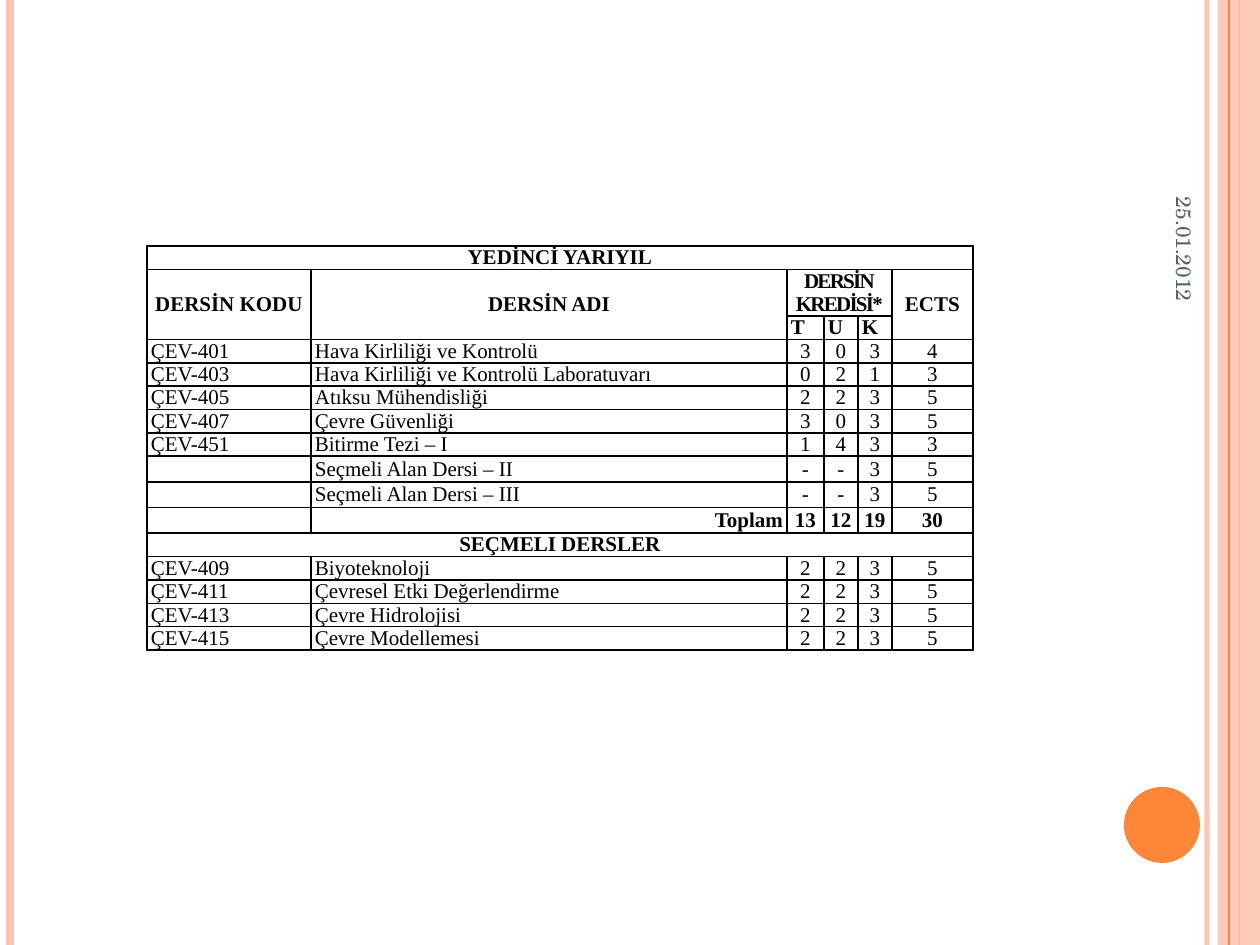
from dataclasses import dataclass

from lxml import etree
from pptx import Presentation
from pptx import util as u
from pptx.dml.color import RGBColor
from pptx.enum import shapes, text
from pptx.oxml import ns

PX = 914400 / 126
WIDTH, HEIGHT = 1260, 945
ORANGE = RGBColor(0xFE, 0x86, 0x37)
PEACH = RGBColor(0xFE, 0xC3, 0xAE)
SLATE = RGBColor(0x57, 0x5F, 0x6D)
BLACK = RGBColor(0, 0, 0)
TABLE_FONT, DATE_FONT = "Times New Roman", "TeX Gyre Schola"
LEFT, CENTER, RIGHT = text.PP_ALIGN.LEFT, text.PP_ALIGN.CENTER, text.PP_ALIGN.RIGHT
COLUMNS = (164, 476, 37, 34, 34, 81)
ROW_HEIGHT = 21


@dataclass(frozen=True)
class Stripe:
    x: int
    color: RGBColor
    points: float
    opacity: int = 100


@dataclass(frozen=True)
class Entry:
    row: int
    col: int
    lines: tuple[str, ...]
    align: text.PP_ALIGN = CENTER
    bold: bool = True
    rows: int = 1
    cols: int = 1
    spacing: int = 0


OUTER_STRIPES = (
    Stripe(1207, PEACH, 3, 93),
    Stripe(10, PEACH, 4.5),
    Stripe(1239, ORANGE, 1.5),
)
INNER_STRIPE = Stripe(1229, ORANGE, 0.75)

HEADINGS = (
    Entry(0, 0, ("YEDİNCİ YARIYIL",), cols=6),
    Entry(1, 0, ("DERSİN KODU",), rows=2),
    Entry(1, 1, ("DERSİN ADI",), rows=2),
    Entry(1, 2, ("DERSİN", "KREDİSİ*"), cols=3, spacing=-100),
    Entry(1, 5, ("ECTS",), rows=2),
    *(Entry(2, col, (name,), LEFT) for col, name in enumerate("TUK", 2)),
    Entry(11, 0, ("SEÇMELI DERSLER",), cols=6),
)
REQUIRED = (
    ("ÇEV-401", "Hava Kirliliği ve Kontrolü", "3", "0", "3", "4"),
    ("ÇEV-403", "Hava Kirliliği ve Kontrolü Laboratuvarı", "0", "2", "1", "3"),
    ("ÇEV-405", "Atıksu Mühendisliği", "2", "2", "3", "5"),
    ("ÇEV-407", "Çevre Güvenliği", "3", "0", "3", "5"),
    ("ÇEV-451", "Bitirme Tezi – I", "1", "4", "3", "3"),
    ("", "Seçmeli Alan Dersi – II", "-", "-", "3", "5"),
    ("", "Seçmeli Alan Dersi – III", "-", "-", "3", "5"),
)
TOTAL = ("", "Toplam", "13", "12", "19", "30")
ELECTIVE = (
    ("ÇEV-409", "Biyoteknoloji", "2", "2", "3", "5"),
    ("ÇEV-411", "Çevresel Etki Değerlendirme", "2", "2", "3", "5"),
    ("ÇEV-413", "Çevre Hidrolojisi", "2", "2", "3", "5"),
    ("ÇEV-415", "Çevre Modellemesi", "2", "2", "3", "5"),
)


def px(length: int) -> u.Emu:
    return u.Emu(round(length * PX))


def set_opacity(properties, percent: int) -> None:
    color = next(properties.iter(ns.qn("a:srgbClr")))
    etree.SubElement(color, ns.qn("a:alpha"), val=str(percent * 1000))


def draw_stripe(slide, stripe: Stripe) -> None:
    line = slide.shapes.add_connector(
        shapes.MSO_CONNECTOR.STRAIGHT, px(stripe.x), 0, px(stripe.x), px(HEIGHT))
    line.line.color.rgb = stripe.color
    line.line.width = u.Pt(stripe.points)
    properties = line._element.spPr
    if stripe.opacity < 100:
        set_opacity(properties, stripe.opacity)
    etree.SubElement(properties, ns.qn("a:effectLst"))


def draw_solid(slide, kind, box: tuple[int, ...], color: RGBColor, opacity: int = 100) -> None:
    solid = slide.shapes.add_shape(kind, *map(px, box))
    solid.shadow.inherit = False
    solid.fill.solid()
    solid.fill.fore_color.rgb = color
    solid.line.fill.background()
    if opacity < 100:
        set_opacity(solid._element.spPr, opacity)


def add_run(paragraph, words: str, font: str, color: RGBColor, bold: bool = False):
    run = paragraph.add_run()
    run.text = words
    run.font.name = font
    run.font.size = u.Pt(12)
    run.font.bold = bold
    run.font.color.rgb = color
    return run


def prepare_cell(cell) -> None:
    cell.vertical_anchor = text.MSO_ANCHOR.MIDDLE
    cell.margin_left = cell.margin_right = px(4)
    cell.margin_top = cell.margin_bottom = 0
    properties = cell._tc.get_or_add_tcPr()
    for side in "LRTB":
        border = etree.SubElement(properties, ns.qn(f"a:ln{side}"), w=str(u.Pt(1)))
        fill = etree.SubElement(border, ns.qn("a:solidFill"))
        etree.SubElement(fill, ns.qn("a:srgbClr"), val=str(BLACK))
    cell.fill.background()
    # Empty cells keep the row low through their end mark
    etree.SubElement(cell.text_frame.paragraphs[0]._p, ns.qn("a:endParaRPr"), sz="1200")


def write_entry(table, entry: Entry) -> None:
    cell = table.cell(entry.row, entry.col)
    if entry.rows * entry.cols > 1:
        cell.merge(table.cell(entry.row + entry.rows - 1, entry.col + entry.cols - 1))
    frame = cell.text_frame
    for index, words in enumerate(entry.lines):
        paragraph = frame.add_paragraph() if index else frame.paragraphs[0]
        paragraph.alignment = entry.align
        run = add_run(paragraph, words, TABLE_FONT, BLACK, entry.bold)
        if entry.spacing:
            run.font._element.set("spc", str(entry.spacing))


def course_entries(first_row: int, courses, bold: bool = False, name_align=LEFT) -> list[Entry]:
    aligns = (LEFT, name_align) + (CENTER,) * 4
    return [
        Entry(row, col, (words,), aligns[col], bold)
        for row, course in enumerate(courses, first_row)
        for col, words in enumerate(course) if words
    ]


def draw_courses(slide) -> None:
    frame = slide.shapes.add_table(
        16, len(COLUMNS), px(147), px(246), px(sum(COLUMNS)), px(428))
    table = frame.table
    table.first_row = table.horz_banding = False
    for column, width in zip(table.columns, COLUMNS):
        column.width = px(width)
    for index, row in enumerate(table.rows):
        row.height = px(ROW_HEIGHT * (2 if index == 1 else 1))
        for cell in row.cells:
            prepare_cell(cell)
    entries = (
        *HEADINGS,
        *course_entries(3, REQUIRED),
        *course_entries(10, [TOTAL], True, RIGHT),
        *course_entries(12, ELECTIVE),
    )
    for entry in entries:
        write_entry(table, entry)


def draw_date(slide) -> None:
    date = slide.shapes.add_textbox(*map(px, (1046, 149, 277, 53)))
    date.rotation = 90
    frame = date.text_frame
    frame.word_wrap = True
    frame.vertical_anchor = text.MSO_ANCHOR.MIDDLE
    frame.paragraphs[0].alignment = RIGHT
    add_run(frame.paragraphs[0], "25.01.2012", DATE_FONT, SLATE)


def main() -> None:
    deck = Presentation()
    deck.slide_width, deck.slide_height = px(WIDTH), px(HEIGHT)
    slide = deck.slides.add_slide(deck.slide_layouts[6])

    # Edge decoration
    for stripe in OUTER_STRIPES:
        draw_stripe(slide, stripe)
    draw_solid(slide, shapes.MSO_SHAPE.RECTANGLE, (1218, 0, 42, HEIGHT), PEACH, 87)
    draw_stripe(slide, INNER_STRIPE)
    draw_solid(slide, shapes.MSO_SHAPE.OVAL, (1124, 787, 76, 76), ORANGE)

    # Course table and date
    draw_courses(slide)
    draw_date(slide)
    deck.save("out.pptx")


if __name__ == "__main__":
    main()
